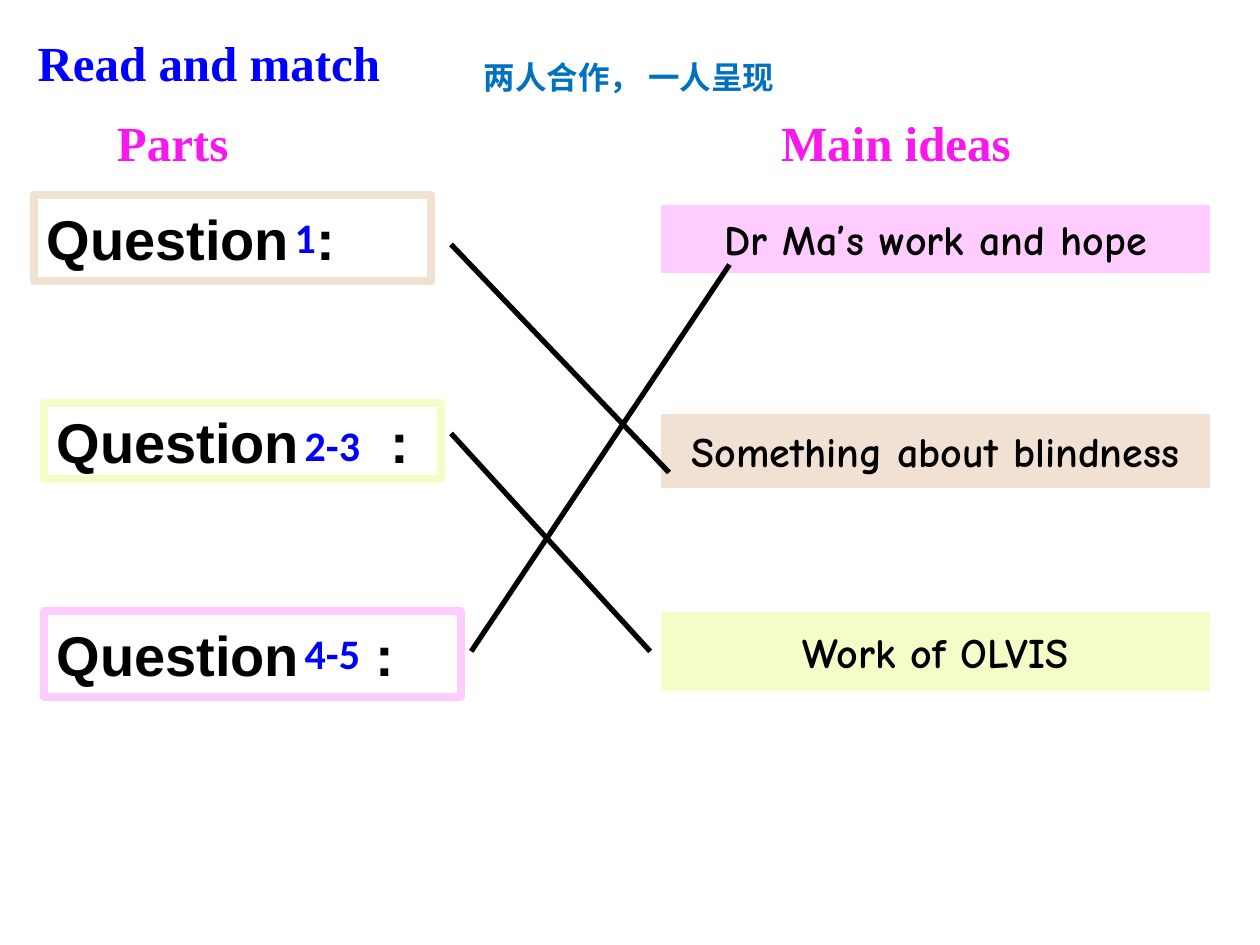
import pptx
import pptx.dml.color
import pptx.enum.shapes
import pptx.enum.text
import pptx.oxml.ns
import pptx.util
from lxml import etree

Inches = pptx.util.Inches
Align = pptx.enum.text.PP_ALIGN
Anchor = pptx.enum.text.MSO_ANCHOR

# Theme: colours, and (font, size, colour) per text role
THEME = {
    "white": "FFFFFF",
    "black": "000000",
    "blindness": "F0E1D2",
    "organisation": "F5FCC8",
    "doctor": "FFCCFF",
    "title": ("Times New Roman", 28, "0000FF"),
    "heading": ("Times New Roman", 28, "F818ED"),
    "hint": ("Comic Neue", 18, "0070C0"),
    "question": ("Arial", 32, "000000"),
    "number": ("Calibri", 24, "0000FF"),
    "idea": ("Comic Neue", 24, "000000"),
}

# Content: positions are left, top, width, height in inches
LABELS = [
    ("Read and match", "title", (0.2, 0.21, 3.43, 0.57)),
    ("Parts", "heading", (0.83, 0.84, 1.42, 0.57)),
    ("Main ideas", "heading", (6.1, 0.84, 2.52, 0.57)),
    ("两人合作， 一人呈现", "hint", (3.74, 0.41, 2.63, 0.4)),
]
# Box, border colour, tab stop of the colon, number, number position
QUESTIONS = [
    ((0.27, 1.55, 3.15, 0.68), "blindness", 2.14, "1", (2.24, 1.63, 0.37, 0.5)),
    ((0.35, 3.2, 3.15, 0.6), "organisation", 2.65, "2-3", (2.32, 3.28, 0.64, 0.5)),
    ((0.35, 4.85, 3.31, 0.68), "doctor", 2.53, "4-5", (2.32, 4.93, 0.64, 0.5)),
]
# Text, fill colour, top, height
IDEAS = [
    ("Dr Ma’s work and hope", "doctor", 1.62, 0.55),
    ("Something about blindness", "blindness", 3.28, 0.6),
    ("Work of OLVIS", "organisation", 4.85, 0.64),
]
IDEA_LEFT, IDEA_WIDTH = 5.24, 4.37
MATCHES = [
    ((3.58, 1.94), (5.31, 3.75)),
    ((3.58, 3.44), (5.16, 5.17)),
    ((5.79, 2.1), (3.74, 5.17)),
]


def colour(value):
    return pptx.dml.color.RGBColor.from_string(value)


def write(shape, text, role, align=Align.LEFT, wrap=True):
    font_name, size, text_colour = THEME[role]
    frame = shape.text_frame
    frame.text = text
    frame.word_wrap = wrap
    paragraph = frame.paragraphs[0]
    paragraph.alignment = align
    for run in paragraph.runs:
        run.font.name = font_name
        run.font.size = pptx.util.Pt(size)
        run.font.bold = True
        run.font.color.rgb = colour(text_colour)
    return paragraph


def add_label(slide, text, role, place, wrap=True):
    shape = slide.shapes.add_textbox(*map(Inches, place))
    write(shape, text, role, wrap=wrap)


def add_box(slide, place, fill, border, border_width):
    shape = slide.shapes.add_shape(
        pptx.enum.shapes.MSO_SHAPE.RECTANGLE, *map(Inches, place))
    shape.shadow.inherit = False
    shape.fill.solid()
    shape.fill.fore_color.rgb = colour(THEME[fill])
    shape.line.color.rgb = colour(THEME[border])
    shape.line.width = pptx.util.Pt(border_width)
    shape.text_frame.vertical_anchor = Anchor.MIDDLE
    return shape


def add_tab_stop(paragraph, position):
    qn = pptx.oxml.ns.qn
    properties = paragraph._p.get_or_add_pPr()
    tabs = etree.SubElement(properties, qn("a:tabLst"))
    etree.SubElement(tabs, qn("a:tab"), pos=str(Inches(position)), algn="l")


def add_match(slide, start, end):
    line = slide.shapes.add_connector(
        pptx.enum.shapes.MSO_CONNECTOR.STRAIGHT, *map(Inches, start + end))
    line.line.color.rgb = colour(THEME["black"])
    line.line.width = pptx.util.Pt(3)
    etree.SubElement(line._element.spPr, pptx.oxml.ns.qn("a:effectLst"))


def main():
    presentation = pptx.Presentation()
    presentation.slide_width = Inches(10)
    presentation.slide_height = Inches(7.5)
    slide = presentation.slides.add_slide(presentation.slide_layouts[6])

    # Question boxes, with room before the colon for the number
    for place, border, colon, number, number_place in QUESTIONS:
        box = add_box(slide, place, "white", border, 4.5)
        add_tab_stop(write(box, "Question\t:", "question"), colon)
        add_label(slide, number, "number", number_place, wrap=False)

    # Main ideas
    for text, fill, top, height in IDEAS:
        box = add_box(slide, (IDEA_LEFT, top, IDEA_WIDTH, height), fill, "white", 0.75)
        write(box, text, "idea", Align.CENTER, wrap=False)

    # Matching lines
    for start, end in MATCHES:
        add_match(slide, start, end)

    # Title, headings and hint
    for text, role, place in LABELS:
        add_label(slide, text, role, place)

    presentation.save("out.pptx")


if __name__ == "__main__":
    main()
